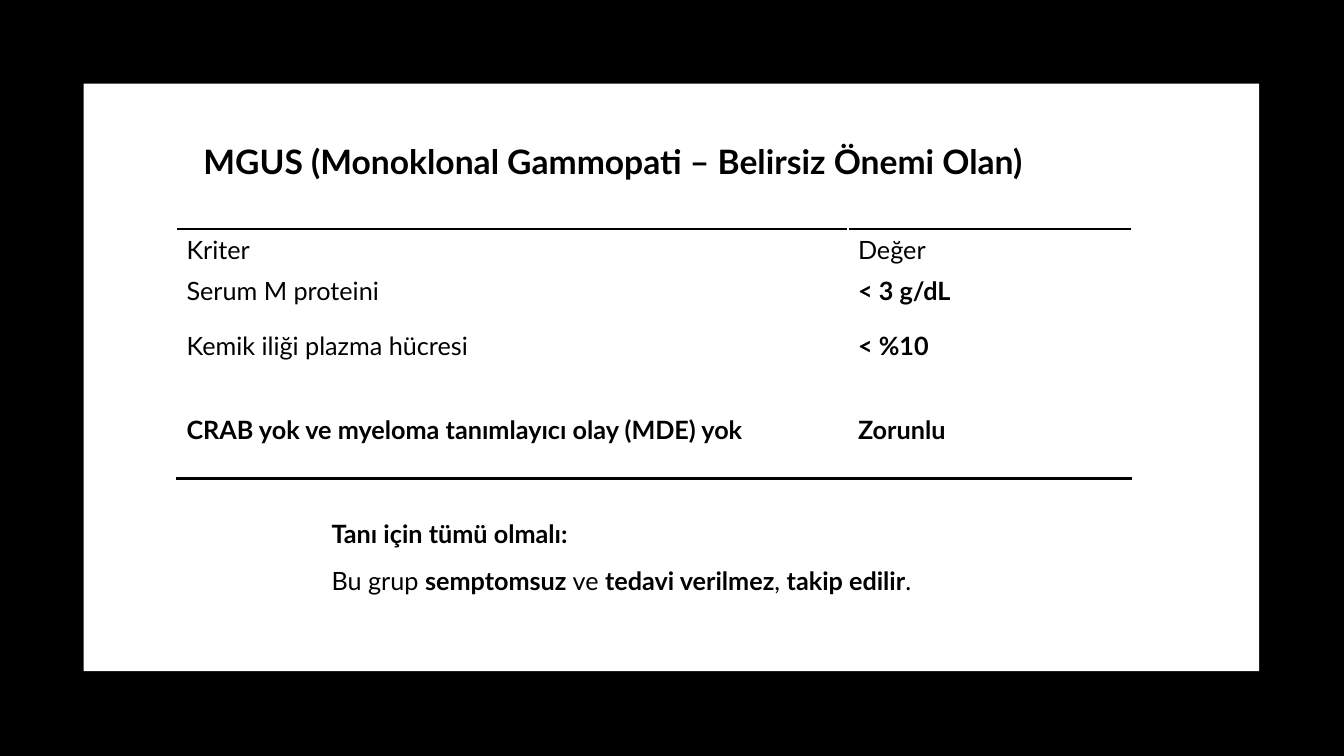
from dataclasses import dataclass

from lxml.etree import SubElement
from pptx import Presentation
from pptx.dml.color import RGBColor as Color
from pptx.enum.shapes import MSO_SHAPE as Shape
from pptx.enum.text import MSO_ANCHOR as Anchor
from pptx.oxml.ns import qn
from pptx.util import Inches, Pt


@dataclass(frozen=True)
class Theme:
    """Colours, font and type sizes of the slide."""
    ink: str = "000000"
    paper: str = "FFFFFF"
    font: str = "Lato"
    title: int = 24
    body: int = 18
    rule: int = 2


class CriteriaPage:
    """A page with a style and a method for each kind of element."""

    def __init__(self, page, theme):
        self.page = page
        self.theme = theme
        page.background.fill.solid()
        page.background.fill.fore_color.rgb = Color.from_string(theme.ink)

    def panel(self, *place):
        """Add a plain paper-coloured rectangle."""
        panel = self.page.shapes.add_shape(Shape.RECTANGLE, *map(Inches, place))
        panel.shadow.inherit = False
        panel.fill.solid()
        panel.fill.fore_color.rgb = Color.from_string(self.theme.paper)
        panel.line.fill.background()

    def add_spans(self, para, spans, size):
        """Fill a paragraph with (text, bold) spans."""
        for text, bold in spans:
            span = para.add_run()
            span.text = text
            span.font.name = self.theme.font
            span.font.size = Pt(size)
            span.font.bold = bold
            span.font.color.rgb = Color.from_string(self.theme.ink)

    def text(self, place, lines, size):
        """Add a text box with one paragraph per line."""
        frame = self.page.shapes.add_textbox(*map(Inches, place)).text_frame
        frame.word_wrap = True
        for index, spans in enumerate(lines):
            para = frame.add_paragraph() if index else frame.paragraphs[0]
            para.line_spacing = 1.3
            para.space_after = Pt(6)
            self.add_spans(para, spans, size)

    def border(self, cell, side):
        """Draw a rule along one side of a cell."""
        props = cell._tc.get_or_add_tcPr()
        line = SubElement(props, qn(f"a:ln{side}"), w=str(Pt(self.theme.rule)))
        fill = SubElement(line, qn("a:solidFill"))
        SubElement(fill, qn("a:srgbClr"), val=self.theme.ink)
        props.insert(0, line)

    def table(self, left, top, widths, heights, rows):
        """Add a table ruled above its first row and below its last."""
        table = self.page.shapes.add_table(
            len(heights), len(widths), Inches(left), Inches(top),
            Inches(sum(widths)), Inches(sum(heights))).table
        table.first_row = table.horz_banding = False
        for column, width in zip(table.columns, widths):
            column.width = Inches(width)
        for row, height, values in zip(table.rows, heights, rows):
            row.height = Inches(height)
            for cell, span in zip(row.cells, values):
                cell.vertical_anchor = Anchor.MIDDLE
                cell.fill.solid()
                cell.fill.fore_color.rgb = Color.from_string(self.theme.paper)
                self.add_spans(cell.text_frame.paragraphs[0], [span], self.theme.body)
        for index, side in ((0, "T"), (len(rows) - 1, "B")):
            for cell in table.rows[index].cells:
                self.border(cell, side)


def main():
    """Build the deck and save it."""
    deck = Presentation()
    deck.slide_width, deck.slide_height = Inches(13.33), Inches(7.5)
    theme = Theme()
    page = CriteriaPage(deck.slides.add_slide(deck.slide_layouts[6]), theme)

    page.panel(0.83, 0.83, 11.66, 5.83)
    page.text((1.92, 1.23, 10.27, 0.52),
              [[("MGUS (Monoklonal Gammopati – Belirsiz Önemi Olan)", True)]],
              theme.title)
    page.table(1.75, 2.27, (6.66, 2.81), (0.41, 0.41, 0.69, 0.97), [
        [("Kriter", False), ("Değer", False)],
        [("Serum M proteini", False), ("< 3 g/dL", True)],
        [("Kemik iliği plazma hücresi", False), ("< %10", True)],
        [("CRAB yok ve myeloma tanımlayıcı olay (MDE) yok", True), ("Zorunlu", True)],
    ])
    page.text((3.19, 5, 7.71, 0.94), [
        [("Tanı için tümü olmalı:", True)],
        [("Bu grup ", False), ("semptomsuz ", True), ("ve ", False),
         ("tedavi verilmez", True), (", ", False), ("takip edilir", True), (".", False)],
    ], theme.body)

    deck.save("out.pptx")


if __name__ == "__main__":
    main()
